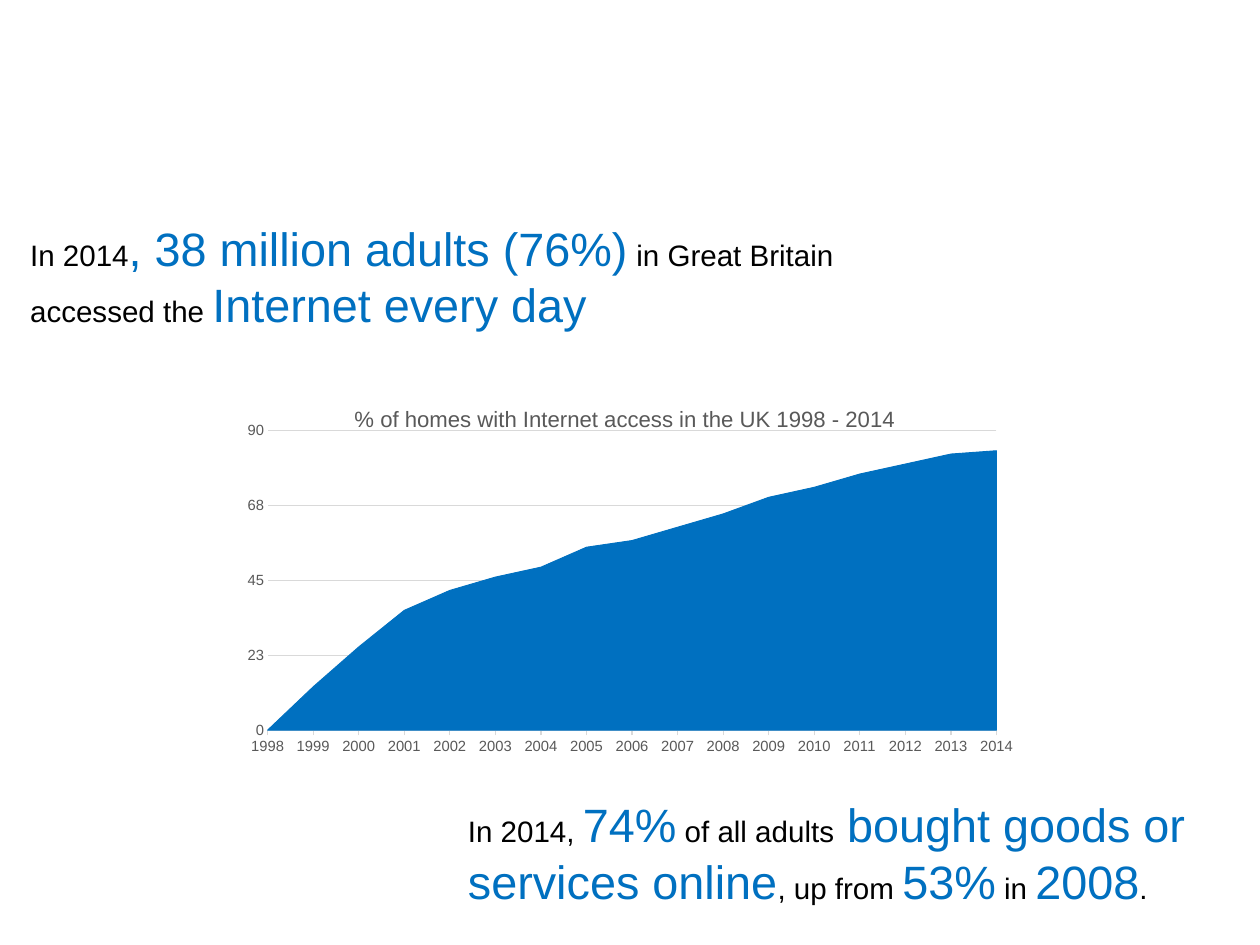
from lxml import etree
from pptx import Presentation, util as u
from pptx.chart.data import CategoryChartData
from pptx.dml.color import RGBColor
from pptx.enum import chart as ch, text as tx
from pptx.oxml.ns import qn

BLUE = RGBColor(0x00, 0x70, 0xC0)
BLACK = RGBColor(0x00, 0x00, 0x00)
GREY = RGBColor(0x59, 0x59, 0x59)
PALE = RGBColor(0xD9, 0xD9, 0xD9)

WIDTH, HEIGHT = u.Inches(14.22), u.Inches(10.67)
PAD = u.Inches(0.07)

PLAIN = dict(name="Arial", size=u.Pt(24), color=BLACK)
BIG = dict(name="Arial", size=u.Pt(38), color=BLUE)
LABEL = dict(name="Arial", size=u.Pt(12), color=GREY)
HEAD = dict(name="Arial", size=u.Pt(18), color=GREY)
BASE = dict(name="Roboto", size=u.Pt(10), color=BLACK)

# Each line alternates plain and big words
DAILY = [
    ["In 2014", ", 38 million adults (76%)", " in Great Britain"],
    ["accessed the ", "Internet every day"],
]
SHOP = [
    ["In 2014, ", "74%", " of all adults", " bought goods or services online",
     ", up from ", "53%", " in ", "2008", "."],
]
YEARS = [str(year) for year in range(1998, 2015)]
HOMES = [0, 13, 25, 36, 42, 46, 49, 55, 57, 61, 65, 70, 73, 77, 80, 83, 84]
PLOT = dict(x=0.041, y=0.113, w=0.937, h=0.805)


def place(left, top, width, height):
    """Turn percent shares of the slide into lengths."""
    return (int(WIDTH * left / 100), int(HEIGHT * top / 100),
            int(WIDTH * width / 100), int(HEIGHT * height / 100))


def assign(item, values):
    for key, value in values.items():
        setattr(item, key, value)


def style(font, look):
    for key, value in look.items():
        if key == "color":
            font.color.rgb = value
        else:
            setattr(font, key, value)


def stroke(line, color, width):
    line.color.rgb = color
    line.width = u.Pt(width)


def add_fact(slide, area, lines):
    frame = slide.shapes.add_textbox(*area).text_frame
    assign(frame, dict(
        word_wrap=True, auto_size=tx.MSO_AUTO_SIZE.SHAPE_TO_FIT_TEXT,
        margin_left=PAD, margin_right=PAD, margin_top=PAD, margin_bottom=PAD))
    for row, words in enumerate(lines):
        para = frame.add_paragraph() if row else frame.paragraphs[0]
        for index, word in enumerate(words):
            run = para.add_run()
            run.text = word
            style(run.font, BIG if index % 2 else PLAIN)


def fix_plot(chart):
    """Pin the inner plot area and start the area on the axis."""
    plot = chart.element.find(".//" + qn("c:plotArea"))
    layout = plot.find(qn("c:layout"))
    if layout is None:
        layout = etree.Element(qn("c:layout"))
        plot.insert(0, layout)
    manual = etree.SubElement(layout, qn("c:manualLayout"))
    parts = dict(layoutTarget="inner", xMode="edge", yMode="edge", **PLOT)
    for tag, value in parts.items():
        etree.SubElement(manual, qn("c:" + tag)).set("val", str(value))
    plot.find(".//" + qn("c:crossBetween")).set("val", "midCat")


def add_trend(slide, area):
    data = CategoryChartData()
    data.categories = YEARS
    data.add_series("Series 1", HOMES)
    chart = slide.shapes.add_chart(
        ch.XL_CHART_TYPE.AREA_STACKED, *area, data).chart
    chart.has_legend = False
    style(chart.font, BASE)

    # Title
    chart.has_title = True
    para = chart.chart_title.text_frame.paragraphs[0]
    run = para.add_run()
    run.text = "% of homes with Internet access in the UK 1998 - 2014"
    style(run.font, dict(HEAD, bold=False))

    # Axes
    years, share = chart.category_axis, chart.value_axis
    for axis in (years, share):
        style(axis.tick_labels.font, LABEL)
        axis.minor_tick_mark = ch.XL_TICK_MARK.NONE
    assign(years, dict(major_tick_mark=ch.XL_TICK_MARK.OUTSIDE,
                       tick_label_position=ch.XL_TICK_LABEL_POSITION.LOW,
                       has_major_gridlines=False))
    stroke(years.format.line, PALE, 1)
    assign(share, dict(major_tick_mark=ch.XL_TICK_MARK.NONE, major_unit=22.5,
                       minimum_scale=0, maximum_scale=90,
                       has_major_gridlines=True))
    assign(share.tick_labels, dict(number_format="#,##0",
                                   number_format_is_linked=False))
    share.format.line.fill.background()
    stroke(share.major_gridlines.format.line, PALE, 1)

    # Area
    chart.plots[0].vary_by_categories = False
    homes = chart.plots[0].series[0].format
    homes.fill.solid()
    homes.fill.fore_color.rgb = BLUE
    stroke(homes.line, BLUE, 0.75)
    fix_plot(chart)


def main():
    deck = Presentation()
    assign(deck, dict(slide_width=WIDTH, slide_height=HEIGHT))
    slide = deck.slides.add_slide(deck.slide_layouts[6])
    add_trend(slide, place(18.71, 41.14, 61.74, 39.36))
    add_fact(slide, place(1.9, 22.59, 93.74, 12.37), DAILY)
    add_fact(slide, place(36.64, 83.6, 68.5, 12.37), SHOP)
    deck.save("out.pptx")


if __name__ == "__main__":
    main()
